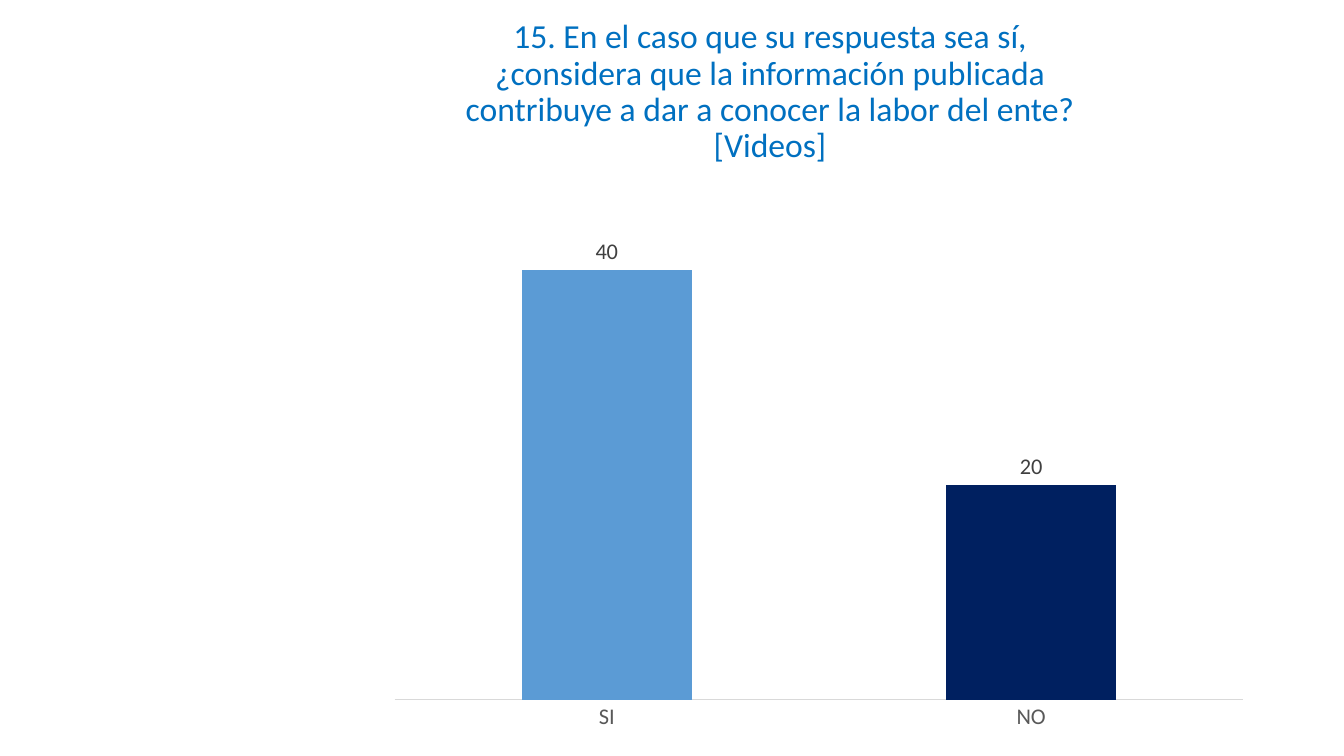
import dataclasses

import pptx
import pptx.chart.data
import pptx.dml.color
import pptx.enum.chart
import pptx.enum.text
import pptx.oxml
import pptx.oxml.ns
import pptx.util

Pt = pptx.util.Pt


@dataclasses.dataclass(frozen=True)
class Theme:
    face: str = "Calibri"
    head: str = "0070C0"
    yes: str = "5B9BD5"
    no: str = "002060"
    axis: str = "595959"
    label: str = "404040"
    rule: str = "D9D9D9"
    big: int = 24
    small: int = 16


def color(code):
    return pptx.dml.color.RGBColor.from_string(code)


def style(font, face, size, code):
    font.name = face
    font.size = Pt(size)
    font.bold = False
    font.color.rgb = color(code)


def write(frame, text, *, face, size, code, align, space=1.0):
    line = frame.paragraphs[0]
    line.alignment = align
    line.line_spacing = space
    run = line.add_run()
    run.text = text
    style(run.font, face, size, code)


class Page:
    def __init__(self, deck, theme):
        self.theme = theme
        self.slide = deck.slides.add_slide(deck.slide_layouts[5])

    def title(self, text, left, top, width, height):
        box = self.slide.shapes.title
        box.left, box.top, box.width, box.height = map(Pt, (left, top, width, height))
        frame = box.text_frame
        frame.word_wrap = True
        frame.auto_size = pptx.enum.text.MSO_AUTO_SIZE.NONE
        frame.vertical_anchor = pptx.enum.text.MSO_ANCHOR.MIDDLE
        write(frame, text, face=self.theme.face, size=self.theme.big,
              code=self.theme.head, align=pptx.enum.text.PP_ALIGN.CENTER, space=0.9)

    def bars(self, name, votes, fills, left, top, width, height):
        theme = self.theme
        data = pptx.chart.data.CategoryChartData()
        data.categories = list(votes)
        data.add_series(name, list(votes.values()))
        kind = pptx.enum.chart.XL_CHART_TYPE.COLUMN_CLUSTERED
        chart = self.slide.shapes.add_chart(
            kind, *map(Pt, (left, top, width, height)), data).chart
        chart.has_legend = False
        chart.has_title = False
        style(chart.font, theme.face, theme.small, theme.axis)

        base = chart.category_axis
        base.major_tick_mark = pptx.enum.chart.XL_TICK_MARK.NONE
        base.format.line.color.rgb = color(theme.rule)
        base.format.line.width = Pt(0.75)
        style(base.tick_labels.font, theme.face, theme.small, theme.axis)
        scale = chart.value_axis
        scale.minimum_scale, scale.maximum_scale = 0, 45
        scale.has_major_gridlines = False
        scale.visible = False

        plot = chart.plots[0]
        plot.gap_width = 150
        plot.vary_by_categories = False
        bars = plot.series[0]
        for spot, code in enumerate(fills):
            fill = bars.points[spot].format.fill
            fill.solid()
            fill.fore_color.rgb = color(code)
        tags = bars.data_labels
        tags.show_value = True
        tags.position = pptx.enum.chart.XL_LABEL_POSITION.OUTSIDE_END
        style(tags.font, theme.face, theme.small, theme.label)
        self.place(chart, x=0.02, y=0.02, w=0.96, h=0.9)

    def place(self, chart, **parts):
        area = chart.element.chart.plotArea
        for old in area.findall(pptx.oxml.ns.qn("c:layout")):
            area.remove(old)
        modes = '<c:layoutTarget val="inner"/><c:xMode val="edge"/><c:yMode val="edge"/>'
        sizes = "".join(f'<c:{key} val="{val}"/>' for key, val in parts.items())
        space = pptx.oxml.ns.nsdecls("c")
        area.insert(0, pptx.oxml.parse_xml(
            f"<c:layout {space}><c:manualLayout>{modes}{sizes}</c:manualLayout></c:layout>"))


def main():
    deck = pptx.Presentation()
    deck.slide_width, deck.slide_height = Pt(960), Pt(540)
    theme = Theme()
    page = Page(deck, theme)
    page.title("15. En el caso que su respuesta sea sí, ¿considera que la información "
               "publicada contribuye a dar a conocer la labor del ente? [Videos]",
               307.4, 21.6, 485.3, 88.6)
    page.bars("Respuestas", {"SI": 40, "NO": 20}, (theme.yes, theme.no),
              269.3, 146.9, 631.4, 383.8)
    deck.save("out.pptx")


if __name__ == "__main__":
    main()
